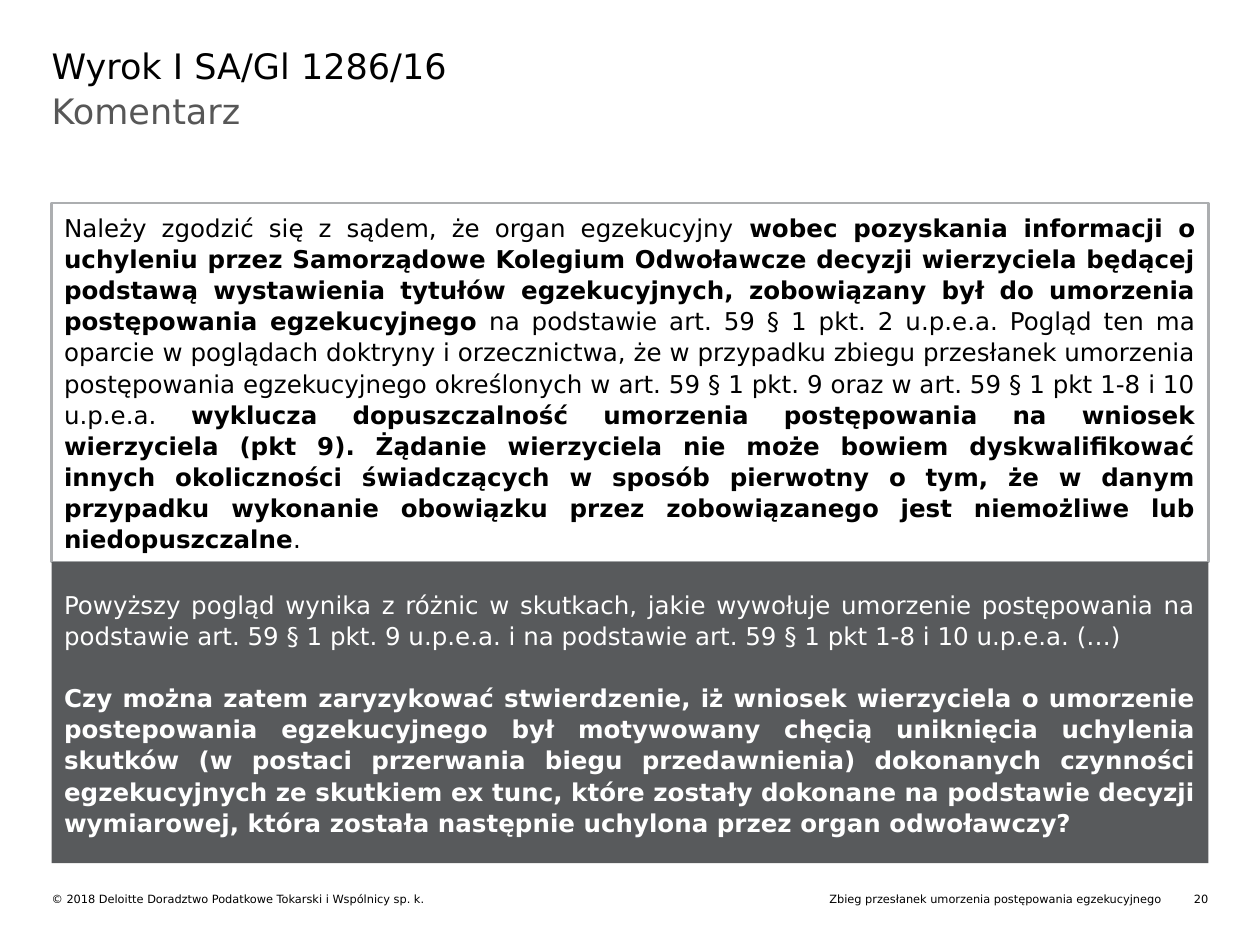
from pptx import Presentation
from pptx.dml.color import RGBColor
from pptx.enum.shapes import MSO_SHAPE as Shape
from pptx.enum.text import MSO_ANCHOR as Anchor, PP_ALIGN as Align
from pptx.util import Inches, Pt

FONT = "DejaVu Sans"
LEFT, WIDTH = 0.41, 9.18


def color(hex_string):
    return RGBColor.from_string(hex_string)


def style(paragraph, size, hex_string, align):
    paragraph.alignment = align
    paragraph.font.name = FONT
    paragraph.font.size = Pt(size)
    paragraph.font.color.rgb = color(hex_string)


prs = Presentation()
prs.slide_width, prs.slide_height = Inches(10), Inches(7.5)
slide = prs.slides.add_slide(prs.slide_layouts[6])

# Title, subtitle and footer: text, left, top, width, height, size, color, align
labels = [
    ("Wyrok I SA/Gl 1286/16", LEFT, 0.35, WIDTH, 0.44, 20, "000000", Align.LEFT),
    ("Komentarz", LEFT, 0.71, WIDTH, 0.83, 20, "575757", Align.LEFT),
    ("© 2018 Deloitte Doradztwo Podatkowe Tokarski i Wspólnicy sp. k.",
     LEFT, 7.08, 4.39, 0.11, 6.5, "000000", Align.LEFT),
    ("Zbieg przesłanek umorzenia postępowania egzekucyjnego",
     5.2, 7.08, 4.02, 0.11, 6.5, "000000", Align.RIGHT),
    ("20", 9.34, 7.08, 0.25, 0.11, 6.5, "000000", Align.RIGHT),
]
for text, left, top, width, height, size, text_color, align in labels:
    frame = slide.shapes.add_textbox(
        Inches(left), Inches(top), Inches(width), Inches(height)).text_frame
    frame.word_wrap = True
    frame.margin_left = frame.margin_right = 0
    frame.margin_top = frame.margin_bottom = 0
    frame.text = text
    style(frame.paragraphs[0], size, text_color, align)

# Commentary panels: each paragraph is a list of (text, bold) runs
ruling = [[
    ("Należy zgodzić się z sądem, że organ egzekucyjny ", False),
    ("wobec pozyskania informacji o uchyleniu przez Samorządowe Kolegium "
     "Odwoławcze decyzji wierzyciela będącej podstawą wystawienia tytułów "
     "egzekucyjnych, zobowiązany był do umorzenia postępowania "
     "egzekucyjnego", True),
    (" na podstawie art. 59 § 1 pkt. 2 u.p.e.a. Pogląd ten ma oparcie w "
     "poglądach doktryny i orzecznictwa, że w przypadku zbiegu przesłanek "
     "umorzenia postępowania egzekucyjnego określonych w art. 59 § 1 pkt. 9 "
     "oraz w art. 59 § 1 pkt 1-8 i 10 u.p.e.a. ", False),
    ("wyklucza dopuszczalność umorzenia postępowania na wniosek wierzyciela "
     "(pkt 9). Żądanie wierzyciela nie może bowiem dyskwalifikować innych "
     "okoliczności świadczących w sposób pierwotny o tym, że w danym "
     "przypadku wykonanie obowiązku przez zobowiązanego jest niemożliwe lub "
     "niedopuszczalne", True),
    (".", False),
]]
question = [
    [("Powyższy pogląd wynika z różnic w skutkach, jakie wywołuje umorzenie "
      "postępowania na podstawie art. 59 § 1 pkt. 9 u.p.e.a. i na podstawie "
      "art. 59 § 1 pkt 1-8 i 10 u.p.e.a. (…)", False)],
    [("Czy można zatem zaryzykować stwierdzenie, iż wniosek wierzyciela o "
      "umorzenie postepowania egzekucyjnego był motywowany chęcią uniknięcia "
      "uchylenia skutków (w postaci przerwania biegu przedawnienia) "
      "dokonanych czynności egzekucyjnych ze skutkiem ex tunc, które zostały "
      "dokonane na podstawie decyzji wymiarowej, która została następnie "
      "uchylona przez organ odwoławczy?", True)],
]
panels = [
    (ruling, 1.61, 2.85, None, "ACAEB0", "000000"),
    (question, 4.46, 2.39, "585A5C", None, "FFFFFF"),
]
for paragraphs, top, height, fill, line, text_color in panels:
    panel = slide.shapes.add_shape(
        Shape.RECTANGLE, Inches(LEFT), Inches(top), Inches(WIDTH), Inches(height))
    panel.shadow.inherit = False
    if fill:
        panel.fill.solid()
        panel.fill.fore_color.rgb = color(fill)
    else:
        panel.fill.background()
    if line:
        panel.line.color.rgb = color(line)
        panel.line.width = Pt(1.5)
    else:
        panel.line.fill.background()

    frame = panel.text_frame
    frame.word_wrap = True
    frame.vertical_anchor = Anchor.MIDDLE
    frame.margin_left = frame.margin_right = Inches(0.1)
    frame.margin_top = frame.margin_bottom = Inches(0.1)
    for index, runs in enumerate(paragraphs):
        paragraph = frame.add_paragraph() if index else frame.paragraphs[0]
        style(paragraph, 14, text_color, Align.JUSTIFY)
        paragraph.line_spacing = 1.06
        if index:
            paragraph.space_before = Pt(17.8)
        for text, bold in runs:
            run = paragraph.add_run()
            run.text = text
            run.font.bold = bold

prs.save("out.pptx")
